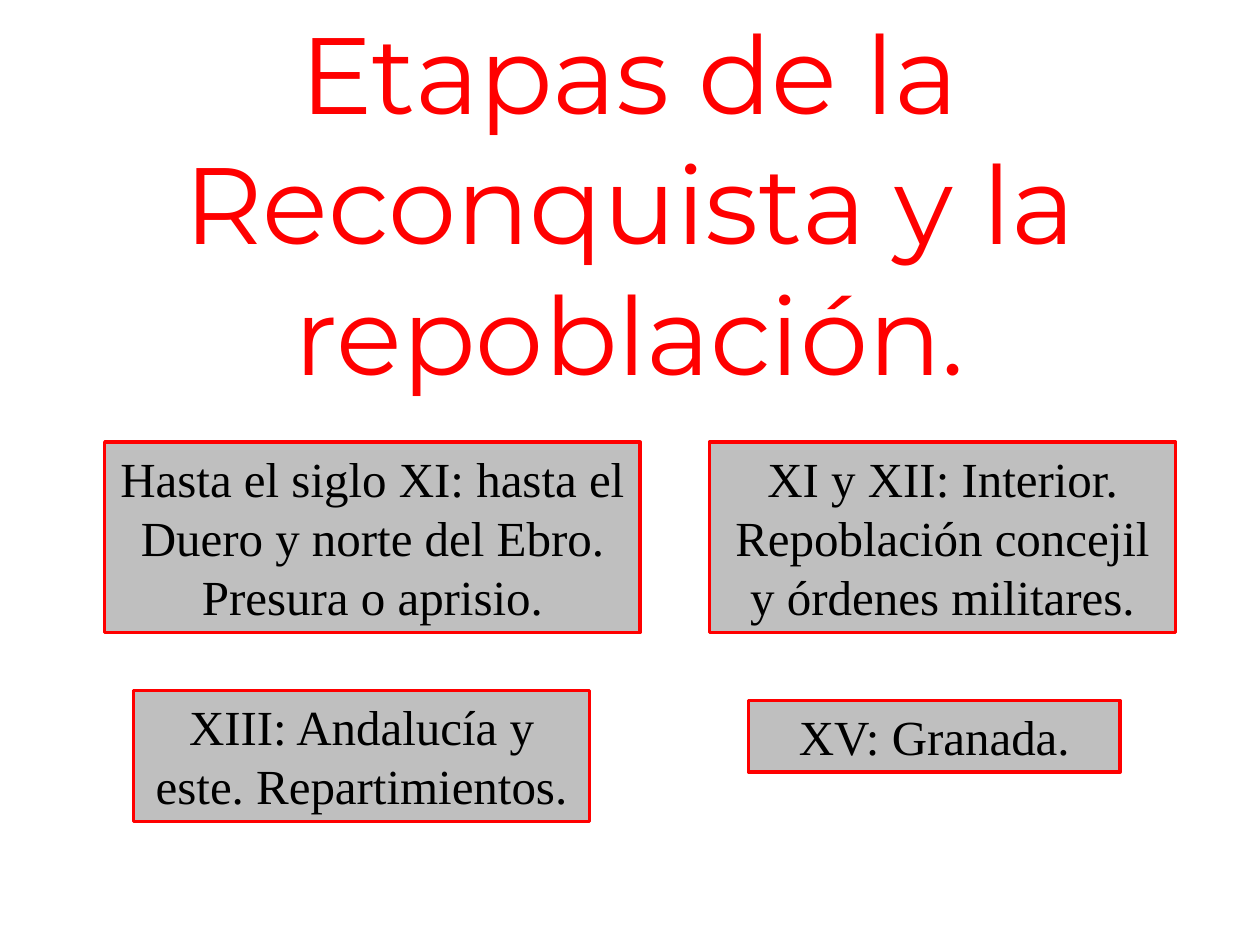
import pptx
import pptx.util
import pptx.dml.color
import pptx.enum.shapes
import pptx.enum.text

Pt = pptx.util.Pt
RED = pptx.dml.color.RGBColor(0xFF, 0x00, 0x00)
GREY = pptx.dml.color.RGBColor(0xBF, 0xBF, 0xBF)
BLACK = pptx.dml.color.RGBColor(0x00, 0x00, 0x00)

TITLE = "Etapas de la Reconquista y la repoblación."
TITLE_BOX = (0, 0, 720, 232.6)

# Each stage: text and its box (left, top, width, height) in points
STAGES = [
    ("Hasta el siglo XI: hasta el Duero y norte del Ebro. Presura o aprisio.",
     (59.8, 252.7, 306, 108.7)),
    ("XI y XII: Interior. Repoblación concejil y órdenes militares.",
     (405.4, 252.7, 266.4, 108.7)),
    ("XIII: Andalucía y este. Repartimientos.", (76.3, 394.6, 260.6, 74.9)),
    ("XV: Granada.", (427.7, 400.3, 212.4, 41)),
]


def write_centred(shape, text, font_name, size, color):
    frame = shape.text_frame
    frame.word_wrap = True
    frame.auto_size = pptx.enum.text.MSO_AUTO_SIZE.NONE
    frame.vertical_anchor = pptx.enum.text.MSO_ANCHOR.TOP
    para = frame.paragraphs[0]
    para.text = text
    para.alignment = pptx.enum.text.PP_ALIGN.CENTER
    para.font.name = font_name
    para.font.size = Pt(size)
    para.font.color.rgb = color


def place_title(page, box):
    title = page.shapes.title
    title.left, title.top, title.width, title.height = map(Pt, box)
    write_centred(title, TITLE, "Montserrat", 62, RED)


def add_stage(page, text, box):
    stage = page.shapes.add_shape(
        pptx.enum.shapes.MSO_SHAPE.RECTANGLE, *map(Pt, box))
    stage.shadow.inherit = False
    stage.fill.solid()
    stage.fill.fore_color.rgb = GREY
    stage.line.color.rgb = RED
    stage.line.width = Pt(2)
    write_centred(stage, text, "Times New Roman", 28, BLACK)


def main():
    deck = pptx.Presentation()
    deck.slide_width, deck.slide_height = Pt(720), Pt(540)
    page = deck.slides.add_slide(deck.slide_layouts.get_by_name("Title Only"))
    place_title(page, TITLE_BOX)
    for text, box in STAGES:
        add_stage(page, text, box)
    deck.save("out.pptx")


if __name__ == "__main__":
    main()
